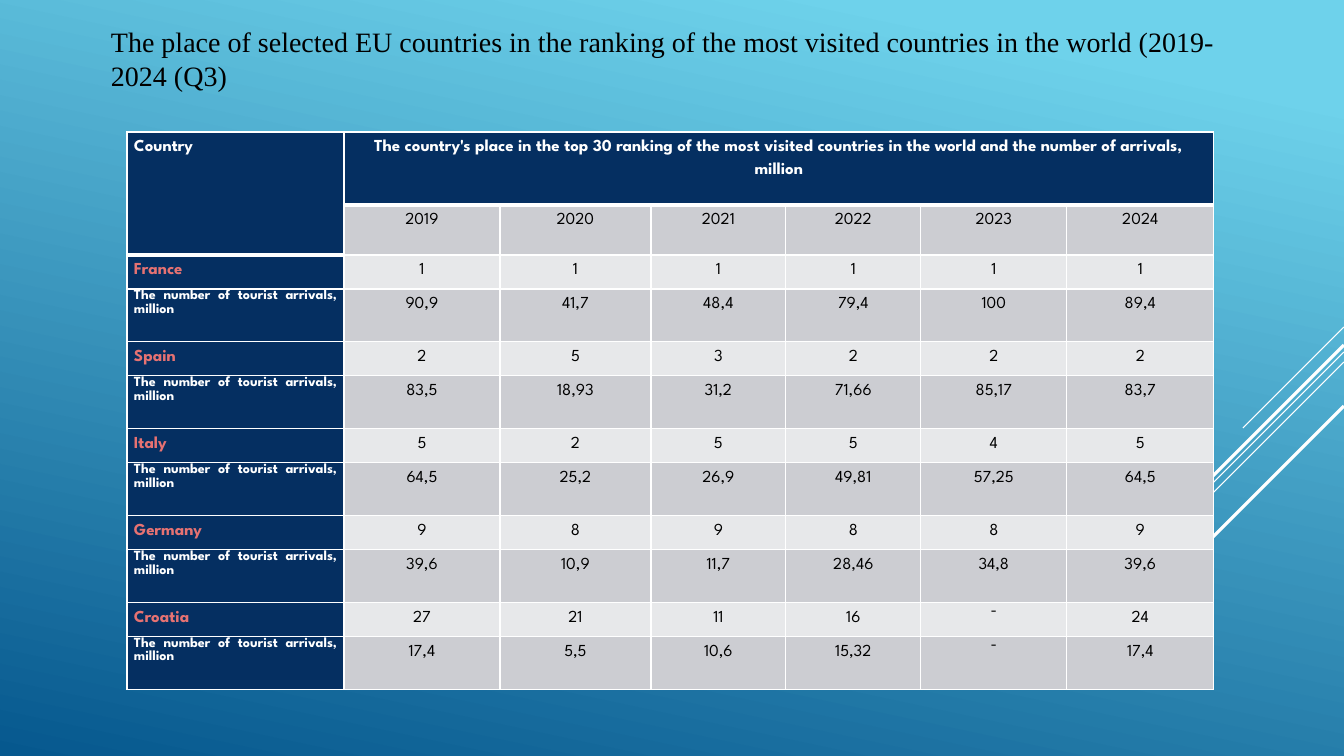
from lxml.etree import SubElement
from pptx import Presentation
from pptx.dml.color import RGBColor
from pptx.enum.shapes import MSO_CONNECTOR
from pptx.enum.text import MSO_AUTO_SIZE, PP_ALIGN
from pptx.oxml import parse_xml
from pptx.oxml.ns import nsdecls, qn
from pptx.util import Pt

SCALE = 914400 / 100.8  # EMU in one px
COLORS = {"sky": "6ED2EB", "sea": "06588E", "navy": "052F61", "rose": "E67272",
          "gray": "CCCDD2", "pale": "E7E8EA", "white": "FFFFFF", "black": "000000"}

# Top of each 45-degree ray at the right edge, its run, and its width in points
RAYS = [(327, 101, 0.75), (352, 329, 0.75), (362, 209, 0.75),
        (345, 193, 2.25), (406, 140, 2.25)]

TITLE = ("The place of selected EU countries in the ranking of the most visited "
         "countries in the world (2019-2024 (Q3)")
HEAD = ("The country's place in the top 30 ranking of the most visited countries "
        "in the world and the number of arrivals, million")
LABEL = "The number of tourist arrivals, million"
YEARS = ["2019", "2020", "2021", "2022", "2023", "2024"]
DATA = {
    "France": ("1 1 1 1 1 1", "90,9 41,7 48,4 79,4 100 89,4"),
    "Spain": ("2 5 3 2 2 2", "83,5 18,93 31,2 71,66 85,17 83,7"),
    "Italy": ("5 2 5 5 4 5", "64,5 25,2 26,9 49,81 57,25 64,5"),
    "Germany": ("9 8 9 8 8 9", "39,6 10,9 11,7 28,46 34,8 39,6"),
    "Croatia": ("27 21 11 16 - 24", "17,4 5,5 10,6 15,32 - 17,4"),
}
COLS = [217, 156, 151, 135, 135, 146, 147]
ROWS = [73, 50] + [34, 53] * len(DATA)


def px(n):
    return round(n * SCALE)


def color(name):
    return RGBColor.from_string(COLORS[name])


def apply(item, **values):
    for name, value in values.items():
        setattr(item, name, value)


def style(para, ink, para_set, font_set):
    apply(para, **para_set)
    apply(para.font, **font_set)
    para.font.color.rgb = color(ink)


def add_back(slide):
    fill = slide.background.fill
    fill.gradient()
    fill.gradient_angle = 258
    for stop, name, place in zip(fill.gradient_stops, ("sky", "sea"), (0.1, 1)):
        stop.color.rgb = color(name)
        stop.position = place


def add_ray(slide, top, run, width):
    ray = slide.shapes.add_connector(MSO_CONNECTOR.STRAIGHT, px(1344), px(top),
                                     px(1344 - run), px(top + run))
    ray.line.color.rgb = color("white")
    ray.line.width = Pt(width)
    SubElement(ray._element.spPr, qn("a:effectLst"))


def add_title(slide):
    box = slide.shapes.add_textbox(px(101), px(20), px(1149), px(78))
    frame = box.text_frame
    apply(frame, word_wrap=True, auto_size=MSO_AUTO_SIZE.SHAPE_TO_FIT_TEXT, text=TITLE)
    style(frame.paragraphs[0], "black", {}, {"name": "Times New Roman", "size": Pt(20)})


def is_head(row, col):
    return row == 0 or (row == 1 and col == 0)


def add_edges(cell, row, col):
    thick = {"T": row > 0 and is_head(row - 1, col), "B": is_head(row, col)}
    props = cell._tc.get_or_add_tcPr()
    for spot, side in enumerate("LRTB"):
        width = Pt(3 if thick.get(side) else 1)
        props.insert(spot, parse_xml(
            f'<a:ln{side} {nsdecls("a")} w="{width}"><a:solidFill>'
            f'<a:srgbClr val="{COLORS["white"]}"/></a:solidFill></a:ln{side}>'))


def fill_cell(cell, row, col, text):
    dark = col == 0 or row == 0
    label = text == LABEL
    nation = text in DATA
    back = "navy" if dark else "gray" if row % 2 else "pale"
    ink = "rose" if nation else "white" if dark else "black"
    cell.fill.solid()
    cell.fill.fore_color.rgb = color(back)
    apply(cell, margin_left=px(7), margin_right=px(7), margin_top=0, margin_bottom=0,
          text=text)
    style(cell.text_frame.paragraphs[0], ink,
          {"alignment": PP_ALIGN.CENTER if col else PP_ALIGN.JUSTIFY,
           "line_spacing": 1.07 if label or text == "-" else 1.5,
           "space_after": Pt(8)},
          {"name": "League Spartan", "size": Pt(10 if label else 12), "bold": dark})
    add_edges(cell, row, col)


def add_grid(slide):
    lines = [["Country", HEAD] + [""] * 5, [""] + YEARS]
    for nation, (ranks, counts) in DATA.items():
        lines += [[nation] + ranks.split(), [LABEL] + counts.split()]
    table = slide.shapes.add_table(len(ROWS), len(COLS), px(127), px(132),
                                   px(sum(COLS)), px(sum(ROWS))).table
    apply(table, first_row=False, horz_banding=False)
    for col, width in zip(table.columns, COLS):
        col.width = px(width)
    for row, height in zip(table.rows, ROWS):
        row.height = px(height)
    for r, line in enumerate(lines):
        for c, text in enumerate(line):
            fill_cell(table.cell(r, c), r, c, text)
    # Joined heading cells
    table.cell(0, 0).merge(table.cell(1, 0))
    table.cell(0, 1).merge(table.cell(0, 6))


def main():
    deck = Presentation()
    apply(deck, slide_width=px(1344), slide_height=px(756))
    slide = deck.slides.add_slide(deck.slide_layouts[6])
    # Backdrop
    add_back(slide)
    for ray in RAYS:
        add_ray(slide, *ray)
    # Content
    add_grid(slide)
    add_title(slide)
    deck.save("out.pptx")


if __name__ == "__main__":
    main()
